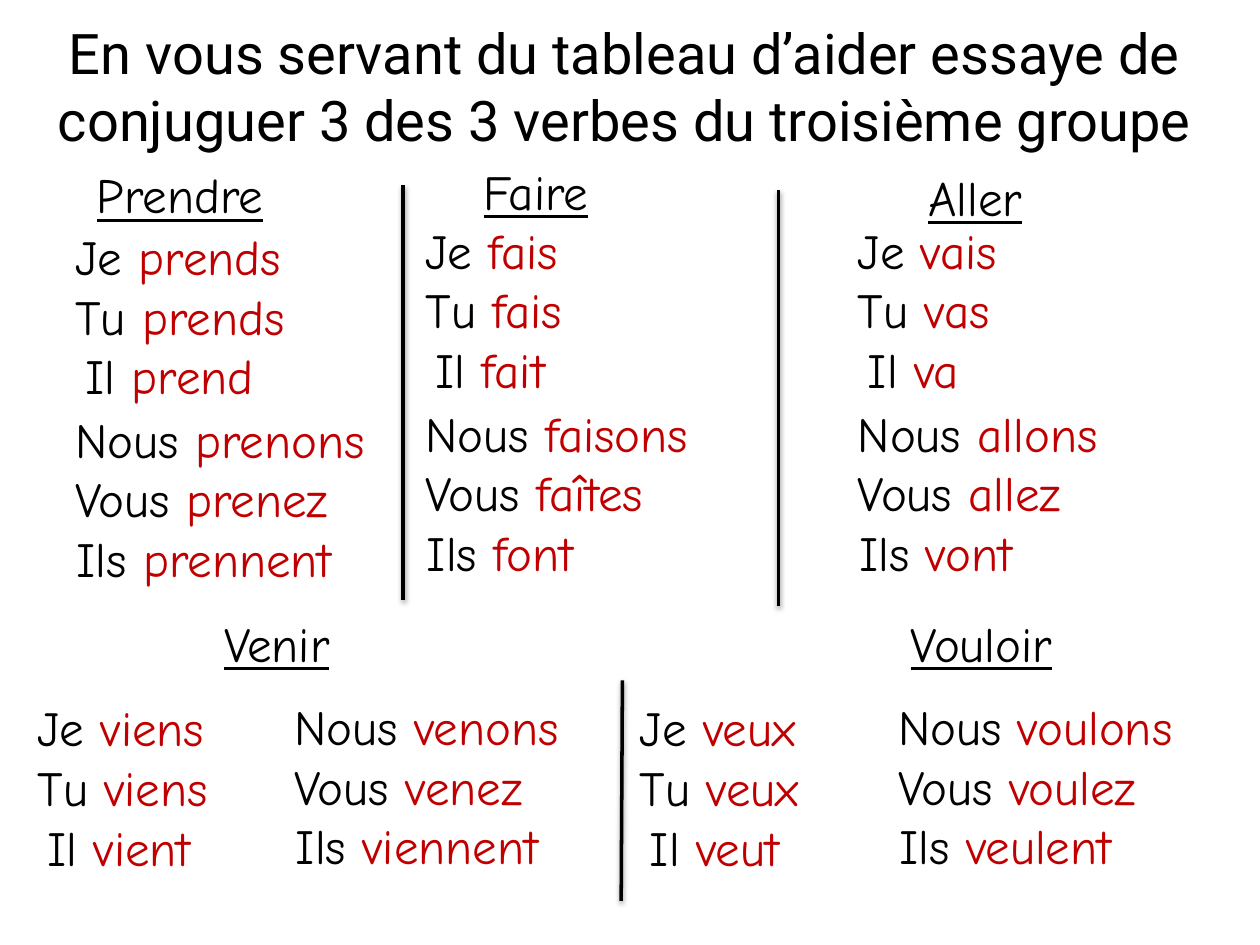
from lxml.etree import SubElement as Sub
from pptx import Presentation
from pptx.dml.color import RGBColor as Rgb
from pptx.enum.shapes import MSO_CONNECTOR as Conn
from pptx.enum.text import MSO_ANCHOR as Anchor, PP_ALIGN as Align
from pptx.oxml.ns import qn
from pptx.util import Inches, Pt

TITLE = "En vous servant du tableau d’aider essaye de conjuguer 3 des 3 verbes du troisième groupe"
BLACK, RED = "000000", "C00000"
ONE = [("Je", 0), ("Tu", 0), ("Il", 0.08)]
MANY = [("Nous", 0), ("Vous", 0), ("Ils", 0.01)]
STEP = 0.473
VERBS = [
    ("Prendre", (0.67, 1.26), (0.5, 1.75), (0.5, 3.2),
     "prends prends prend", "prenons prenez prennent"),
    ("Faire", (3.74, 1.23), (3.28, 1.7), (3.28, 3.15),
     "fais fais fait", "faisons faîtes font"),
    ("Aller", (7.27, 1.28), (6.71, 1.7), (6.71, 3.15),
     "vais vas va", "allons allez vont"),
    ("Venir", (1.68, 4.82), (0.2, 5.49), (2.24, 5.48),
     "viens viens vient", "venons venez viennent"),
    ("Vouloir", (7.13, 4.82), (4.98, 5.49), (7.03, 5.48),
     "veux veux veut", "voulons voulez veulent"),
]
RULES = [(3.2, 1.47, 3.2, 4.76), (6.18, 1.51, 6.18, 4.81), (4.94, 5.4, 4.93, 7.15)]

deck = Presentation()
deck.slide_width, deck.slide_height = Inches(10), Inches(7.5)
slide = deck.slides.add_slide(deck.slide_layouts[6])


def color(code):
    return Rgb.from_string(code)


def add_text(runs, x, y, w=2.14, h=0.66, size=28, font="Comic Neue",
             under=None, align=None, anchor=Anchor.TOP, before=20):
    frame = slide.shapes.add_textbox(*map(Inches, (x, y, w, h))).text_frame
    frame.word_wrap = True
    frame.vertical_anchor = anchor
    para = frame.paragraphs[0]
    para.alignment = align
    if before:
        gap = Sub(para._p.get_or_add_pPr(), qn("a:spcBef"))
        Sub(gap, qn("a:spcPct"), val=str(before * 1000))
    for words, code in runs:
        run = para.add_run()
        run.text = words
        run.font.size = Pt(size)
        run.font.name = font
        run.font.underline = under
        run.font.color.rgb = color(code)


def add_forms(people, forms, x, y, w):
    for row, ((who, shift), form) in enumerate(zip(people, forms.split())):
        add_text([(who + " ", BLACK), (form, RED)], x + shift, y + row * STEP, w)


def add_rule(ends):
    line = slide.shapes.add_connector(Conn.STRAIGHT, *map(Inches, ends))
    line.line.color.rgb = color(BLACK)
    line.line.width = Pt(2)
    effect = Sub(line._element.spPr, qn("a:effectLst"))
    shade = Sub(effect, qn("a:outerShdw"), blurRad=str(Pt(3.1)),
                dist=str(Pt(1.6)), dir="5400000", rotWithShape="0")
    tint = Sub(shade, qn("a:srgbClr"), val=BLACK)
    Sub(tint, qn("a:alpha"), val="38000")


add_text([(TITLE, BLACK)], 0.04, 0.05, 9.84, 1.26, size=32, font="Roboto",
         align=Align.CENTER, anchor=Anchor.MIDDLE, before=0)
for verb, head, left, right, one, many in VERBS:
    add_text([(verb, BLACK)], *head, under=True)
    add_forms(ONE, one, *left, 2.14)
    add_forms(MANY, many, *right, 2.69)
for ends in RULES:
    add_rule(ends)

deck.save("out.pptx")
